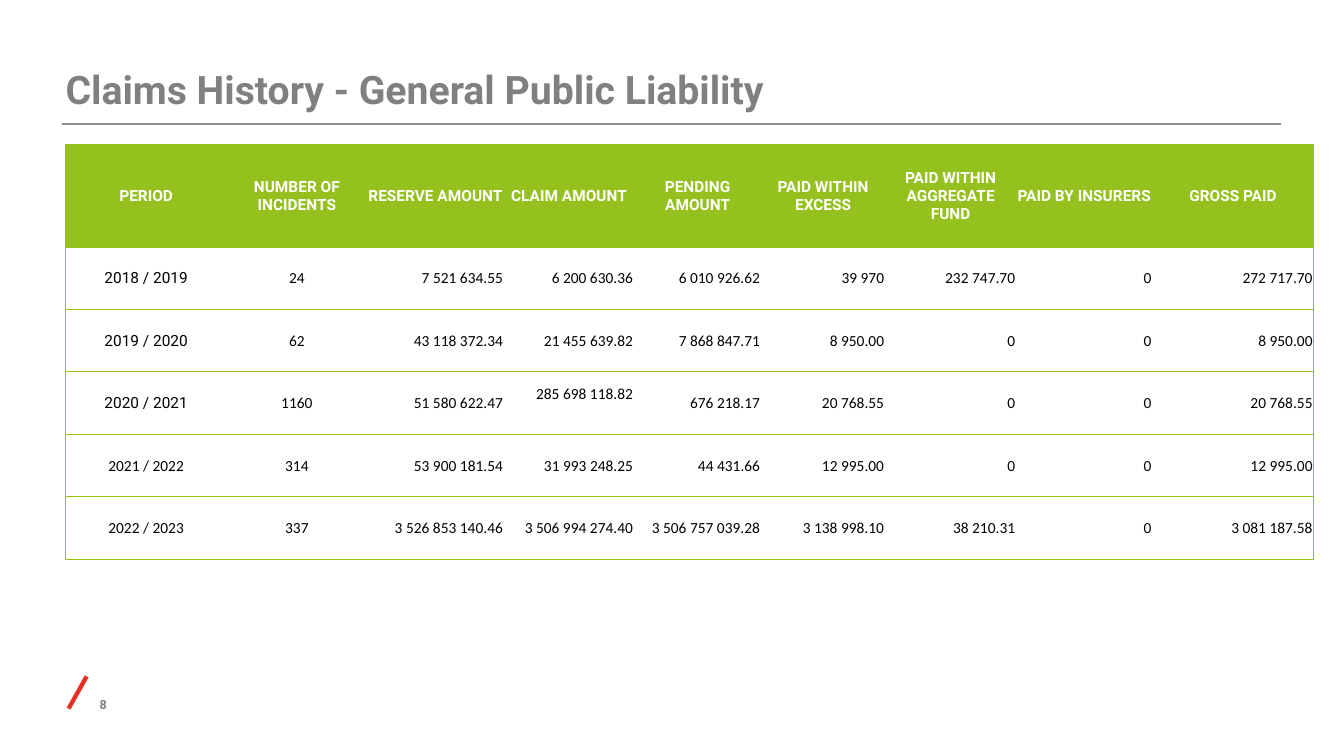
from dataclasses import dataclass

from lxml import etree
from pptx import Presentation
from pptx.dml.color import RGBColor
from pptx.enum.shapes import MSO_CONNECTOR
from pptx.enum.text import MSO_ANCHOR, PP_ALIGN
from pptx.oxml.ns import qn
from pptx.slide import Slide
from pptx.table import _Cell
from pptx.text.text import TextFrame
from pptx.util import Pt

LEFT, CENTER, RIGHT = PP_ALIGN.LEFT, PP_ALIGN.CENTER, PP_ALIGN.RIGHT
MIDDLE, BOTTOM = MSO_ANCHOR.MIDDLE, MSO_ANCHOR.BOTTOM
STRAIGHT = MSO_CONNECTOR.STRAIGHT
EMU_PER_PX = 9144


@dataclass(frozen=True)
class Theme:
    heading_font: str = "Roboto"
    figure_font: str = "Calibri"
    green: str = "95C11F"
    white: str = "FFFFFF"
    black: str = "000000"
    grey: str = "808080"
    rule_grey: str = "8B8E91"
    red: str = "E73023"
    title_size: int = 28
    table_size: int = 11
    number_size: int = 9
    border_width: int = 1


@dataclass(frozen=True)
class Rule:
    start: tuple[int, int]
    end: tuple[int, int]
    color: str
    width: float


@dataclass(frozen=True)
class Column:
    heading: str
    width: int
    align: PP_ALIGN = RIGHT


@dataclass(frozen=True)
class ClaimYear:
    period: str
    figures: tuple[str, ...]
    period_font: str


THEME = Theme()
RULES = (
    Rule((62, 123), (1271, 123), THEME.rule_grey, 1.65),
    Rule((68, 703), (86, 671), THEME.red, 3.05),
)
COLUMNS = (
    Column("PERIOD", 160, CENTER),
    Column("NUMBER OF INCIDENTS", 139, CENTER),
    Column("RESERVE AMOUNT", 136),
    Column("CLAIM AMOUNT", 129),
    Column("PENDING AMOUNT", 126),
    Column("PAID WITHIN EXCESS", 123),
    Column("PAID WITHIN AGGREGATE FUND", 130),
    Column("PAID BY INSURERS", 135),
    Column("GROSS PAID", 160),
)
CLAIM_YEARS = (
    ClaimYear("2018 / 2019", ("24", "7 521 634.55", "6 200 630.36", "6 010 926.62",
              "39 970", "232 747.70", "0", "272 717.70"), THEME.heading_font),
    ClaimYear("2019 / 2020", ("62", "43 118 372.34", "21 455 639.82", "7 868 847.71",
              "8 950.00", "0", "0", "8 950.00"), THEME.heading_font),
    ClaimYear("2020 / 2021", ("1160", "51 580 622.47", "285 698 118.82", "676 218.17",
              "20 768.55", "0", "0", "20 768.55"), THEME.heading_font),
    ClaimYear("2021 / 2022", ("314", "53 900 181.54", "31 993 248.25", "44 431.66",
              "12 995.00", "0", "0", "12 995.00"), THEME.figure_font),
    ClaimYear("2022 / 2023", ("337", "3 526 853 140.46", "3 506 994 274.40",
              "3 506 757 039.28", "3 138 998.10", "38 210.31", "0", "3 081 187.58"),
              THEME.figure_font),
)
TABLE_LEFT, TABLE_TOP = 65, 143
HEADING_HEIGHT, YEAR_HEIGHT = 102, 62
CELL_MARGIN = 1
RAISED_FIGURE = "285 698 118.82"
RAISED_MARGIN = 18


def px(length: int) -> int:
    return length * EMU_PER_PX


def write(frame: TextFrame, text: str, *, size: int, color: str,
          font: str = THEME.heading_font, bold: bool = False,
          align: PP_ALIGN = LEFT) -> None:
    paragraph = frame.paragraphs[0]
    paragraph.alignment = align
    run = paragraph.add_run()
    run.text = text
    run.font.name = font
    run.font.size = Pt(size)
    run.font.bold = bold
    run.font.color.rgb = RGBColor.from_string(color)


def add_label(slide: Slide, text: str, left: int, top: int, width: int, height: int,
              *, size: int, align: PP_ALIGN = LEFT, bottom: int = 0) -> None:
    frame = slide.shapes.add_textbox(px(left), px(top), px(width), px(height)).text_frame
    frame.word_wrap = True
    frame.vertical_anchor = BOTTOM
    frame.margin_left = frame.margin_right = frame.margin_top = 0
    frame.margin_bottom = px(bottom)
    write(frame, text, size=size, color=THEME.grey, bold=True, align=align)


def add_rule(slide: Slide, rule: Rule) -> None:
    connector = slide.shapes.add_connector(
        STRAIGHT, *map(px, rule.start), *map(px, rule.end))
    connector.line.color.rgb = RGBColor.from_string(rule.color)
    connector.line.width = Pt(rule.width)
    etree.SubElement(connector._element.spPr, qn("a:effectLst"))


def set_borders(cell: _Cell, visible: str) -> None:
    properties = cell._tc.get_or_add_tcPr()
    for side in "LRTB":
        border = etree.SubElement(properties, qn(f"a:ln{side}"))
        if side in visible:
            border.set("w", str(Pt(THEME.border_width)))
            fill = etree.SubElement(border, qn("a:solidFill"))
            etree.SubElement(fill, qn("a:srgbClr")).set("val", THEME.green)
        else:
            etree.SubElement(border, qn("a:noFill"))


def fill_cell(cell: _Cell, text: str, column: int, *, fill: str, color: str,
              font: str, bold: bool, align: PP_ALIGN) -> None:
    sides = "TB"
    if column == 0:
        sides += "L"
    if column == len(COLUMNS) - 1:
        sides += "R"
    set_borders(cell, sides)
    cell.fill.solid()
    cell.fill.fore_color.rgb = RGBColor.from_string(fill)
    cell.vertical_anchor = MIDDLE
    cell.margin_left = cell.margin_right = cell.margin_top = px(CELL_MARGIN)
    cell.margin_bottom = px(RAISED_MARGIN if text == RAISED_FIGURE else 0)
    write(cell.text_frame, text, size=THEME.table_size, color=color, font=font,
          bold=bold, align=align)


def add_claims_table(slide: Slide) -> None:
    width = sum(column.width for column in COLUMNS)
    height = HEADING_HEIGHT + YEAR_HEIGHT * len(CLAIM_YEARS)
    claims = slide.shapes.add_table(len(CLAIM_YEARS) + 1, len(COLUMNS), px(TABLE_LEFT),
                                    px(TABLE_TOP), px(width), px(height)).table
    claims.first_row = claims.horz_banding = False
    for index, row in enumerate(claims.rows):
        row.height = px(YEAR_HEIGHT if index else HEADING_HEIGHT)
    for c, column in enumerate(COLUMNS):
        claims.columns[c].width = px(column.width)
        fill_cell(claims.cell(0, c), column.heading, c, fill=THEME.green,
                  color=THEME.white, font=THEME.heading_font, bold=True, align=CENTER)
        for r, year in enumerate(CLAIM_YEARS, start=1):
            fill_cell(claims.cell(r, c), (year.period, *year.figures)[c], c,
                      fill=THEME.white, color=THEME.black,
                      font=THEME.figure_font if c else year.period_font,
                      bold=False, align=column.align)


def main() -> None:
    deck = Presentation()
    deck.slide_width, deck.slide_height = px(1333), px(750)
    slide = deck.slides.add_slide(deck.slide_layouts[6])
    add_label(slide, "8", 49, 688, 57, 23, size=THEME.number_size, align=RIGHT, bottom=5)
    for rule in RULES:
        add_rule(slide, rule)
    add_label(slide, "Claims History - General Public Liability", 65, 39, 1071, 72,
              size=THEME.title_size)
    add_claims_table(slide)
    deck.save("out.pptx")


if __name__ == "__main__":
    main()
